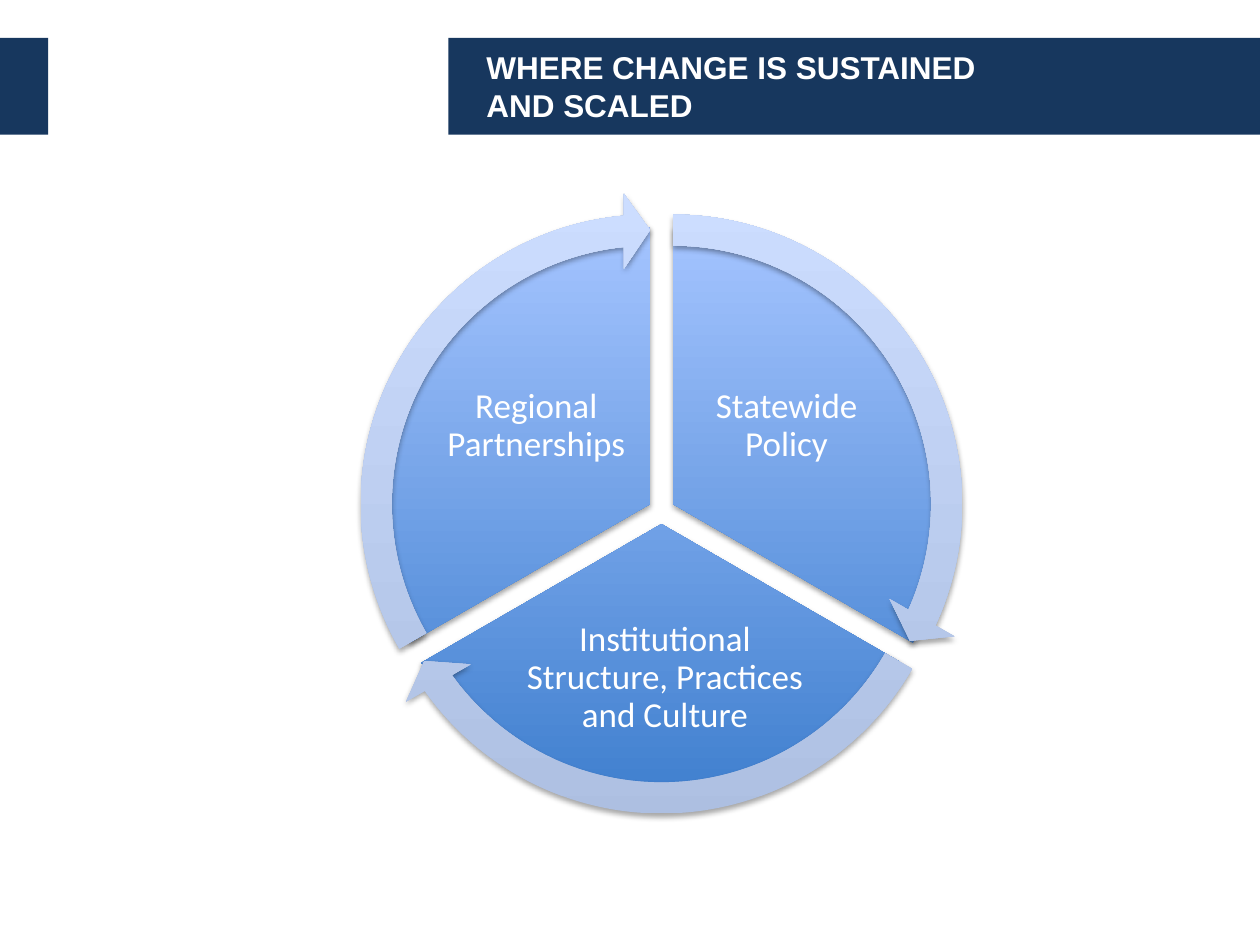
"""Build a slide with a three-part cycle of where change is sustained and scaled."""
from dataclasses import dataclass

from lxml import etree
from pptx import Presentation
from pptx import util as u
from pptx.dml.color import RGBColor
from pptx.enum import shapes, text
from pptx.oxml.ns import qn


@dataclass(frozen=True)
class Theme:
    navy: str = "17375E"
    white: str = "FFFFFF"
    shadow: str = "000000"
    sector: tuple = ("3F7FCE", "A4C4FF")
    arrow: tuple = ("ADBFE1", "CCDDFF")
    title_font: str = "Arial"
    label_font: str = "Calibri"
    title_size: float = 18
    label_size: float = 20


THEME = Theme()
BAR_TOP, BAR_HEIGHT = 21.6, 55.4
CENTER_X, CENTER_Y = 378, 288
SECTOR_SIZE, ARROW_SIZE = 316.8, 355.7
ARROW_BAND, ARROW_HEAD, ARROW_WING = 0.05, 3.28, 0.06
TURN, SWEEP = 216, 72
SECTORS = [
    (162, 6.5, 0, "Statewide Policy", (393, 196.5, 113, 94.5)),
    (18, 0, 11.5, "Institutional Structure, Practices and Culture", (295, 346, 170, 83)),
    (90, -6.5, 0, "Regional Partnerships", (250, 196.5, 113, 94.5)),
]


def points(*lengths):
    return [u.Pt(length) for length in lengths]


def add_run(para, words, font, size, bold=False):
    span = para.add_run()
    span.text = words
    span.font.name, span.font.size, span.font.bold = font, u.Pt(size), bold
    span.font.color.rgb = RGBColor.from_string(THEME.white)


def add_bar(page, left, width):
    bar = page.shapes.add_shape(
        shapes.MSO_SHAPE.RECTANGLE, *points(left, BAR_TOP, width, BAR_HEIGHT))
    bar.shadow.inherit = False
    bar.fill.solid()
    bar.fill.fore_color.rgb = RGBColor.from_string(THEME.navy)
    bar.line.fill.background()
    page.shapes.title._element.addprevious(bar._element)


def set_title(page, lines):
    title = page.shapes.title
    title.left, title.top, title.width, title.height = points(
        270.7, BAR_TOP, 413.3, BAR_HEIGHT)
    frame = title.text_frame
    frame.word_wrap = True
    frame.auto_size = text.MSO_AUTO_SIZE.NONE
    frame.vertical_anchor = text.MSO_ANCHOR.MIDDLE
    para = frame.paragraphs[0]
    para.alignment = text.PP_ALIGN.LEFT
    for index, line in enumerate(lines):
        if index:
            para.add_line_break()
        add_run(para, line, THEME.title_font, THEME.title_size, bold=True)


def add_shadow(shape):
    shape.shadow.inherit = False
    effects = shape._element.spPr.find(qn("a:effectLst"))
    shadow = etree.SubElement(
        effects, qn("a:outerShdw"), blurRad=str(u.Pt(3.1)), dist=str(u.Pt(1.8)),
        dir="5400000", rotWithShape="0")
    color = etree.SubElement(shadow, qn("a:srgbClr"), val=THEME.shadow)
    etree.SubElement(color, qn("a:alpha"), val="35000")


def add_round(page, kind, size, shift, colors, adjustments):
    left = CENTER_X + shift[0] - size / 2
    top = CENTER_Y + shift[1] - size / 2
    shape = page.shapes.add_shape(kind, *points(left, top, size, size))
    for index, value in enumerate(adjustments):
        shape.adjustments[index] = value
    shape.fill.gradient()
    shape.fill.gradient_angle = 90
    for stop, color in zip(shape.fill.gradient_stops, colors):
        stop.color.rgb = RGBColor.from_string(color)
    shape.line.fill.background()
    add_shadow(shape)


def add_label(page, words, area):
    box = page.shapes.add_textbox(*points(*area))
    frame = box.text_frame
    frame.word_wrap = True
    frame.vertical_anchor = text.MSO_ANCHOR.MIDDLE
    frame.margin_left = frame.margin_right = u.Pt(2)
    frame.margin_top = frame.margin_bottom = u.Pt(2)
    para = frame.paragraphs[0]
    para.alignment = text.PP_ALIGN.CENTER
    para.line_spacing = 0.9
    para.space_after = u.Pt(7)
    add_run(para, words, THEME.label_font, THEME.label_size)


def main():
    deck = Presentation()
    deck.slide_width, deck.slide_height = points(720, 540)
    page = deck.slides.add_slide(deck.slide_layouts[5])
    add_bar(page, 256.3, 463.7)
    add_bar(page, 0, 27.5)
    set_title(page, ["WHERE CHANGE IS SUSTAINED", "AND SCALED"])
    for start, dx, dy, words, area in SECTORS:
        add_round(page, shapes.MSO_SHAPE.PIE, SECTOR_SIZE, (dx, dy), THEME.sector,
                  [start, (start + SWEEP) % TURN])
        add_label(page, words, area)
    for start, dx, dy, *_ in SECTORS:
        tip = (start + SWEEP) % TURN - ARROW_HEAD
        add_round(page, shapes.MSO_SHAPE.CIRCULAR_ARROW, ARROW_SIZE, (dx, dy), THEME.arrow,
                  [ARROW_BAND, ARROW_HEAD, tip, start, ARROW_WING])
    deck.save("out.pptx")


if __name__ == "__main__":
    main()
